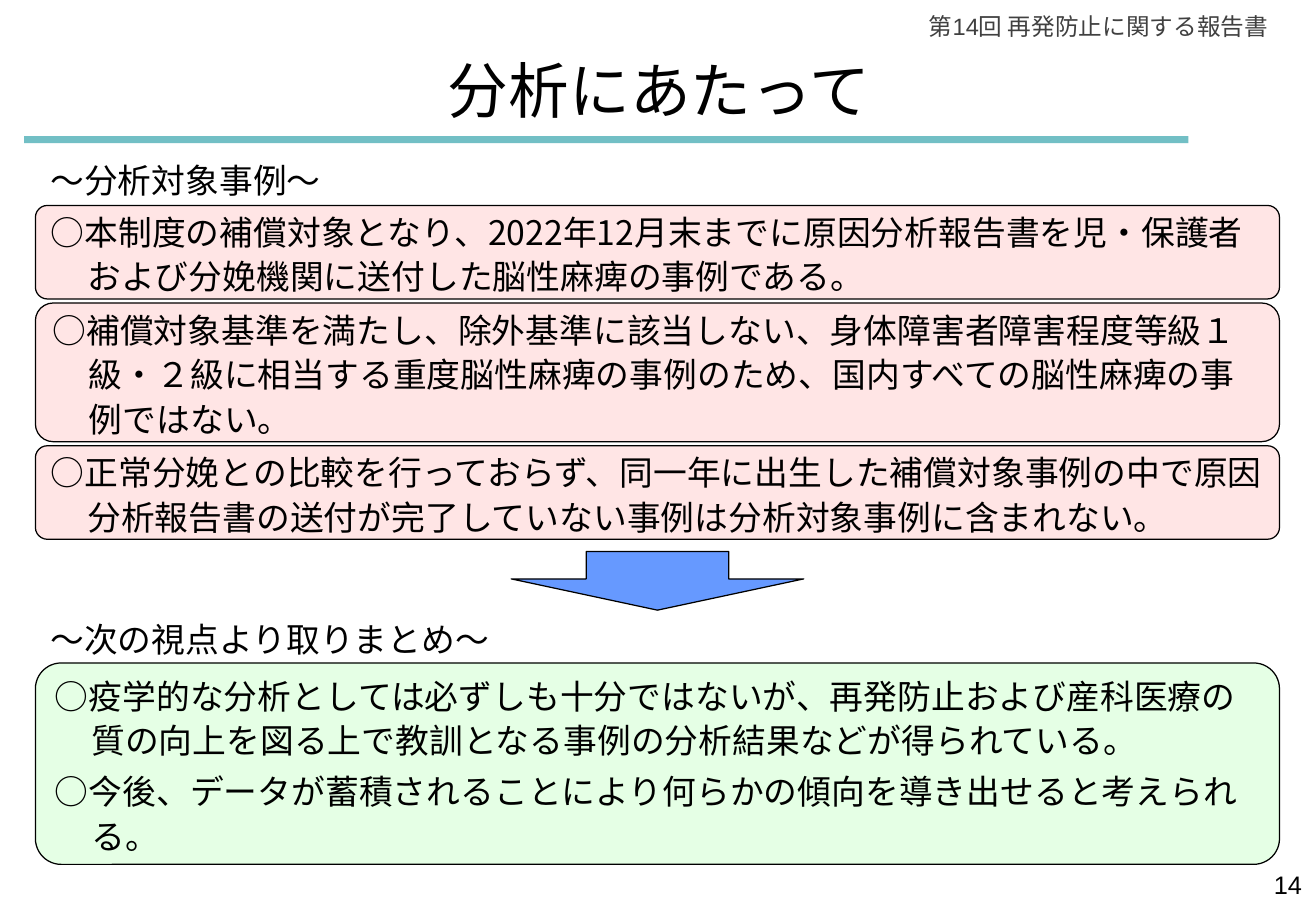
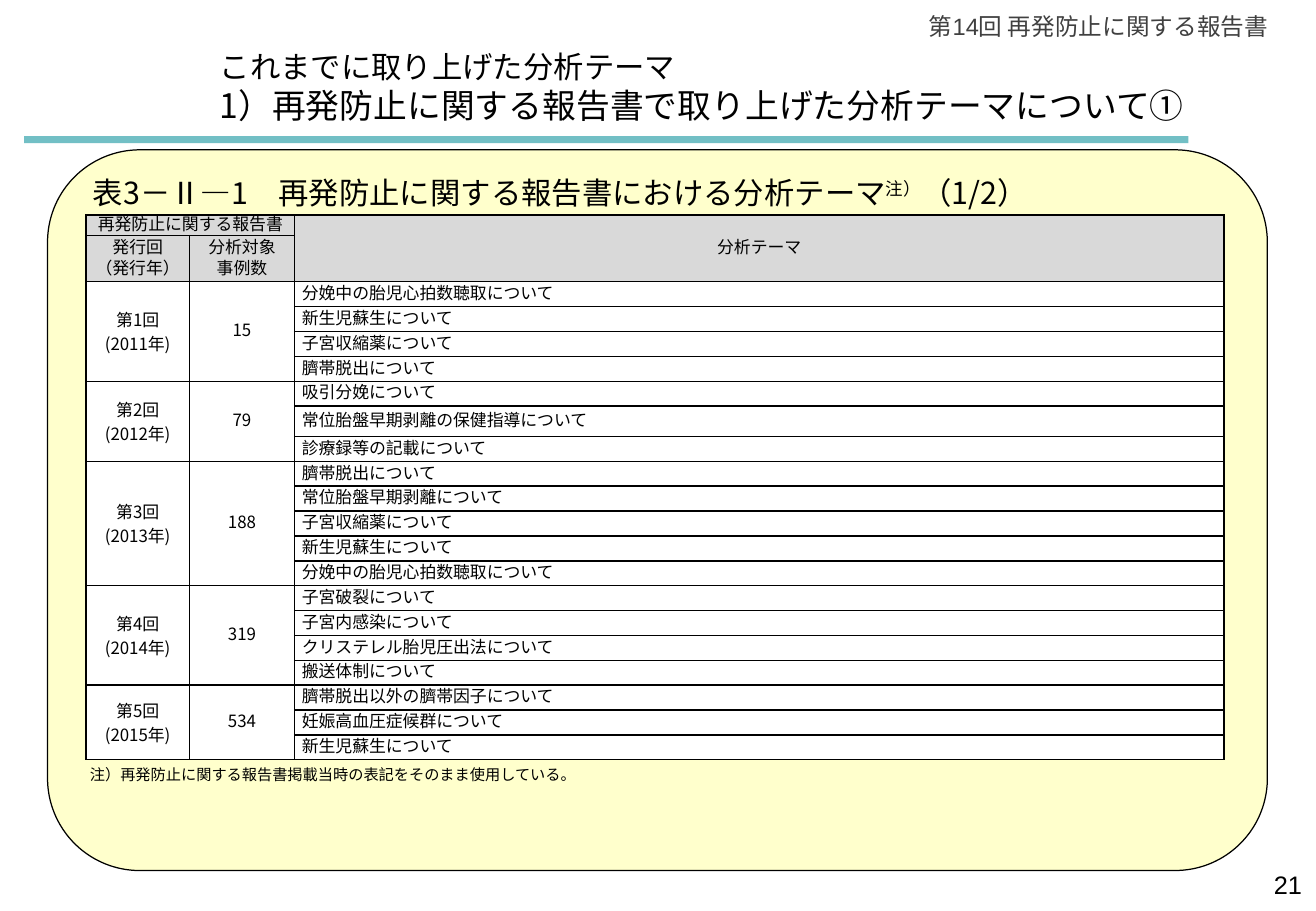
from collections import namedtuple
from lxml import etree
from pptx import Presentation
from pptx.dml.color import RGBColor
from pptx.enum.shapes import MSO_SHAPE
from pptx.enum.text import MSO_ANCHOR, MSO_AUTO_SIZE, PP_ALIGN
from pptx.oxml.ns import qn
from pptx.util import Inches, Pt

Box = namedtuple("Box", "column row width height")
COLUMNS, ROWS, CELL = 130, 90, Inches(1 / 12)
COLORS = {"black": "000000", "white": "FFFFFF", "gray_text": "404040", "bar": "72BFC5",
          "pink": "FFE5E5", "green": "E5FFE5", "yellow": "FFFFCC", "arrow": "6699FF",
          "header": "D9D9D9"}
JAPANESE, LATIN = "Noto Sans CJK JP", "Arial"
CORNER = 0.128

CASES = [
    (9.24, "○本制度の補償対象となり、2022年12月末までに原因分析報告書を児・保護者および分娩機関に送付した脳性麻痺の事例である。"),
    (13.7, "○補償対象基準を満たし、除外基準に該当しない、身体障害者障害程度等級１級・２級に相当する重度脳性麻痺の事例のため、国内すべての脳性麻痺の事例ではない。"),
    (9.24, "○正常分娩との比較を行っておらず、同一年に出生した補償対象事例の中で原因分析報告書の送付が完了していない事例は分析対象事例に含まれない。"),
]
VIEWPOINTS = [
    "○疫学的な分析としては必ずしも十分ではないが、再発防止および産科医療の質の向上を図る上で教訓となる事例の分析結果などが得られている。",
    "○今後、データが蓄積されることにより何らかの傾向を導き出せると考えられる。",
]
REPORTS = [
    ("第1回", "(2011年)", "15", ["分娩中の胎児心拍数聴取について", "新生児蘇生について",
                             "子宮収縮薬について", "臍帯脱出について"]),
    ("第2回", "(2012年)", "79", ["吸引分娩について", "常位胎盤早期剥離の保健指導について",
                             "診療録等の記載について"]),
    ("第3回", "(2013年)", "188", ["臍帯脱出について", "常位胎盤早期剥離について", "子宮収縮薬について",
                              "新生児蘇生について", "分娩中の胎児心拍数聴取について"]),
    ("第4回", "(2014年)", "319", ["子宮破裂について", "子宮内感染について",
                              "クリステレル胎児圧出法について", "搬送体制について"]),
    ("第5回", "(2015年)", "534", ["臍帯脱出以外の臍帯因子について", "妊娠高血圧症候群について",
                              "新生児蘇生について"]),
]
TALL_THEME = "常位胎盤早期剥離の保健指導について"


def place(box):
    """Turn a grid box into left, top, width and height."""
    return [int(length * CELL) for length in box]


def color(name):
    """Look up a palette colour."""
    return RGBColor.from_string(COLORS[name])


def style(paragraph, size, align=PP_ALIGN.LEFT, font_name=JAPANESE, ink="black"):
    """Set alignment and the Latin and East Asian fonts of a paragraph."""
    paragraph.alignment = align
    font = paragraph.font
    font.size, font.name = Pt(size), font_name
    font.color.rgb = color(ink)
    latin = paragraph._p.pPr.find(qn("a:defRPr")).find(qn("a:latin"))
    east_asian = etree.Element(qn("a:ea"), typeface=JAPANESE)
    latin.addnext(east_asian)


def fill_text(frame, lines, sizes, anchor=MSO_ANCHOR.TOP, **look):
    """Write one paragraph per line into a text frame."""
    frame.auto_size = MSO_AUTO_SIZE.NONE
    frame.word_wrap = True
    frame.vertical_anchor = anchor
    frame.text = "\n".join(lines)
    for paragraph, size in zip(frame.paragraphs, sizes):
        style(paragraph, size, **look)


def add_text(slide, box, text, size, **look):
    """Add a text box with a single paragraph."""
    frame = slide.shapes.add_textbox(*place(box)).text_frame
    fill_text(frame, [text], [size], **look)
    return frame.paragraphs[0]


def add_panel(slide, kind, box, fill, outlined=True, adjustments=()):
    """Add a flat filled shape, with a thin black outline if wanted."""
    shape = slide.shapes.add_shape(kind, *place(box))
    shape.shadow.inherit = False
    shape.fill.solid()
    shape.fill.fore_color.rgb = color(fill)
    if outlined:
        shape.line.color.rgb = color("black")
        shape.line.width = Pt(0.75)
    else:
        shape.line.fill.background()
    for index, value in enumerate(adjustments):
        shape.adjustments[index] = value
    return shape


def start_slide(presentation, title_box, lines, sizes, align, number):
    """Add a title-only slide with the shared bar, header and page number."""
    slide = presentation.slides.add_slide(presentation.slide_layouts[5])
    add_panel(slide, MSO_SHAPE.RECTANGLE, Box(2.4, 13.44, 115, 0.72), "bar", outlined=False)
    add_text(slide, Box(88.6, 0.6, 37.9, 4.1), "第14回 再発防止に関する報告書", 14,
             align=PP_ALIGN.RIGHT, font_name=LATIN, ink="gray_text")
    add_text(slide, Box(99.4, 85.3, 30.4, 4.5), number, 15, align=PP_ALIGN.RIGHT, font_name=LATIN)
    title = slide.shapes.title
    title.left, title.top, title.width, title.height = place(title_box)
    fill_text(title.text_frame, lines, sizes, MSO_ANCHOR.MIDDLE, align=align)
    return slide


def add_label(slide, box, text):
    """Add a section label above a group of boxes."""
    add_text(slide, box, text, 20, anchor=MSO_ANCHOR.MIDDLE).line_spacing = 1.3


def add_statements(slide, box, fill, statements):
    """Add a rounded box of statements with hanging indents."""
    shape = add_panel(slide, MSO_SHAPE.ROUNDED_RECTANGLE, box, fill, adjustments=[CORNER])
    fill_text(shape.text_frame, statements, [20] * len(statements), MSO_ANCHOR.MIDDLE)
    for index, paragraph in enumerate(shape.text_frame.paragraphs):
        paragraph.line_spacing = 1.1
        if index:
            paragraph.space_before = Pt(4)
        paragraph._p.pPr.set("marL", str(Inches(0.3)))
        paragraph._p.pPr.set("indent", str(-Inches(0.3)))


def add_flow(slide, box):
    """Stack the case boxes, the arrow and the viewpoint box."""
    label = Box(box.column + 0.3, box.row, box.width, 7.2)
    add_label(slide, label, "～分析対象事例～")
    row = box.row + 6.7
    for height, text in CASES:
        add_statements(slide, Box(box.column, row, box.width, height), "pink", [text])
        row += height + 0.4
    arrow_width = 28.9
    add_panel(slide, MSO_SHAPE.DOWN_ARROW,
              Box(box.column + (box.width - arrow_width) / 2, row + 0.8, arrow_width, 5.8),
              "arrow", adjustments=[0.487, 0.532])
    add_label(slide, label._replace(row=box.row + 45.3), "～次の視点より取りまとめ～")
    height = 19.9
    add_statements(slide, Box(box.column, box.row + box.height - height, box.width, height),
                   "green", VIEWPOINTS)


def set_cell(cell, lines, fill="white", align=PP_ALIGN.CENTER, spacing=Pt(12)):
    """Write a table cell."""
    cell.fill.solid()
    cell.fill.fore_color.rgb = color(fill)
    cell.text = "\n".join(lines)
    for paragraph in cell.text_frame.paragraphs:
        style(paragraph, 10, align)
        if spacing:
            paragraph.line_spacing = spacing


def set_borders(cell):
    """Draw black lines on all sides of a cell."""
    properties = cell._tc.get_or_add_tcPr()
    for index, side in enumerate(("lnL", "lnR", "lnT", "lnB")):
        line = etree.Element(qn("a:" + side), w=str(Pt(1)))
        solid = etree.SubElement(line, qn("a:solidFill"))
        etree.SubElement(solid, qn("a:srgbClr"), val=COLORS["black"])
        properties.insert(index, line)


def add_theme_table(slide, box):
    """Add the table of analysis themes grouped by report."""
    themes = [theme for report in REPORTS for theme in report[3]]
    header_heights, tall = [2.04, 4.56], 3
    regular = (box.height - sum(header_heights) - tall) / (len(themes) - 1)
    heights = header_heights + [tall if theme == TALL_THEME else regular for theme in themes]
    widths = [10.2, 10.4, box.width - 20.6]
    table = slide.shapes.add_table(len(heights), len(widths), *place(box)).table
    table.first_row = table.horz_banding = False
    for column, width in zip(table.columns, widths):
        column.width = int(width * CELL)
    for row, height in zip(table.rows, heights):
        row.height = int(height * CELL)
    for cell in table.iter_cells():
        cell.margin_left = cell.margin_right = Inches(0.06)
        cell.margin_top = cell.margin_bottom = 0
        cell.vertical_anchor = MSO_ANCHOR.MIDDLE
        set_borders(cell)
    table.cell(0, 0).merge(table.cell(0, 1))
    table.cell(0, 2).merge(table.cell(1, 2))
    set_cell(table.cell(0, 0), ["再発防止に関する報告書"], "header")
    set_cell(table.cell(0, 2), ["分析テーマ"], "header")
    set_cell(table.cell(1, 0), ["発行回", "（発行年）"], "header")
    set_cell(table.cell(1, 1), ["分析対象", "事例数"], "header")
    first = len(header_heights)
    for issue, year, count, report_themes in REPORTS:
        last = first + len(report_themes) - 1
        for column in (0, 1):
            table.cell(first, column).merge(table.cell(last, column))
        set_cell(table.cell(first, 0), [issue, year], spacing=None)
        set_cell(table.cell(first, 1), [count])
        for row, theme in enumerate(report_themes, first):
            set_cell(table.cell(row, 2), [theme], align=PP_ALIGN.JUSTIFY)
        first = last + 1


def add_theme_panel(slide, box):
    """Add the yellow panel with its caption, table and note."""
    add_panel(slide, MSO_SHAPE.ROUNDED_RECTANGLE, box, "yellow", adjustments=[CORNER])
    caption = add_text(slide, Box(box.column + 3.3, box.row + 1.8, 117.5, 4.8),
                       "表3－Ⅱ―1　再発防止に関する報告書における分析テーマ", 18)
    mark = caption.add_run()
    mark.text = "注）"
    mark._r.get_or_add_rPr().set("baseline", "30000")
    caption.add_run().text = "（1/2）"
    add_theme_table(slide, Box(box.column + 3.8, box.row + 6.44, 112.4, 53.9))
    add_text(slide, Box(box.column + 3, box.row + 60.2, 55.3, 3),
             "注）再発防止に関する報告書掲載当時の表記をそのまま使用している。", 9,
             anchor=MSO_ANCHOR.MIDDLE)


def main():
    """Build both slides and save the file."""
    presentation = Presentation()
    presentation.slide_width, presentation.slide_height = COLUMNS * CELL, ROWS * CELL
    slide = start_slide(presentation, Box(26.8, 4.6, 76.6, 8.4), ["分析にあたって"], [36],
                        PP_ALIGN.CENTER, "14")
    add_flow(slide, Box(3.5, 13.6, 122.9, 71.8))
    slide = start_slide(presentation, Box(20.5, 4.1, 101, 9),
                        ["これまでに取り上げた分析テーマ", "1）再発防止に関する報告書で取り上げた分析テーマについて①"],
                        [18, 20], PP_ALIGN.LEFT, "21")
    add_theme_panel(slide, Box(4.7, 14.8, 120.5, 71.2))
    presentation.save("out.pptx")


if __name__ == "__main__":
    main()
